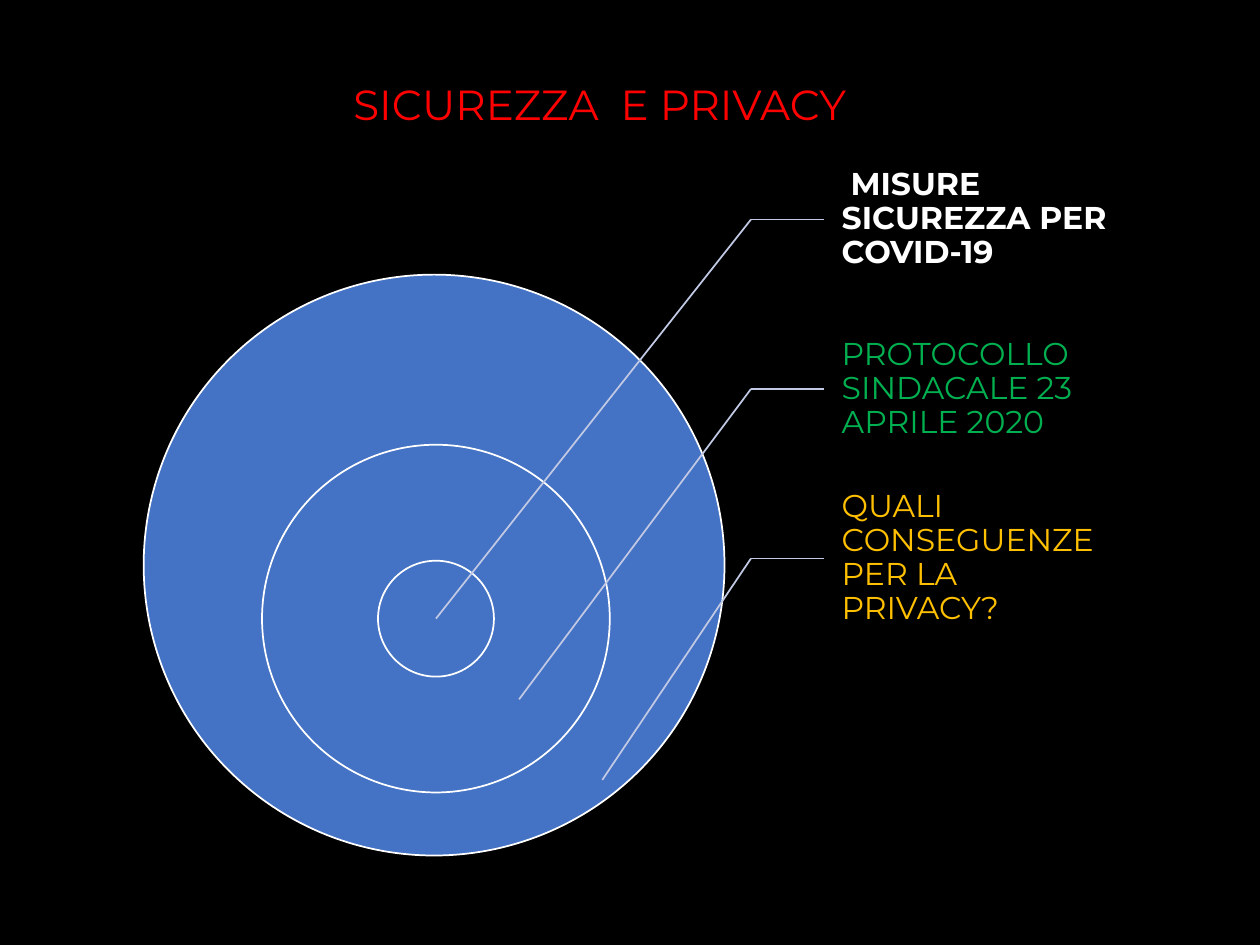
"""Build the slide on safety and privacy: three nested circles with labelled leaders."""
from dataclasses import dataclass

from pptx import Presentation
from pptx import util as u
from pptx.dml.color import RGBColor
from pptx.enum import shapes, text
from pptx.oxml.ns import qn
from lxml import etree


@dataclass(frozen=True)
class Theme:
    font: str = "Montserrat"
    title_size: int = 24
    label_size: int = 18
    line_width: int = 1
    background: str = "000000"
    title: str = "FF0000"
    circle: str = "4472C4"
    outline: str = "FFFFFF"
    leader: str = "C1C9E4"
    measures: str = "FFFFFF"
    protocol: str = "00B050"
    privacy: str = "FFC000"


THEME = Theme()
LABEL_LEFT, LABEL_TOP, LABEL_WIDTH, LABEL_HEIGHT = 6.54, 1.07, 2.3, 1.345
ELBOW_X = 5.96


def rgb(value):
    return RGBColor.from_string(value)


def add_words(slide, box, words, size, color, anchor, insets, align, bold=False):
    area = slide.shapes.add_textbox(*map(u.Inches, box))
    frame = area.text_frame
    frame.text = words
    frame.word_wrap = True
    frame.vertical_anchor = anchor
    frame.margin_left, frame.margin_top, frame.margin_right, frame.margin_bottom = map(
        u.Inches, insets)
    paragraph = frame.paragraphs[0]
    paragraph.alignment = align
    paragraph.line_spacing = 0.9
    font = paragraph.runs[0].font
    font.name, font.size, font.bold = THEME.font, u.Pt(size), bold
    font.color.rgb = rgb(color)


def add_circle(slide, left, top, diameter):
    circle = slide.shapes.add_shape(
        shapes.MSO_SHAPE.OVAL, *map(u.Inches, (left, top, diameter, diameter)))
    circle.shadow.inherit = False
    circle.fill.solid()
    circle.fill.fore_color.rgb = rgb(THEME.circle)
    circle.line.color.rgb = rgb(THEME.outline)
    circle.line.width = u.Pt(THEME.line_width)


def add_leader(slide, start, end):
    leader = slide.shapes.add_connector(
        shapes.MSO_CONNECTOR.STRAIGHT, *map(u.Inches, (*start, *end)))
    leader.line.color.rgb = rgb(THEME.leader)
    leader.line.width = u.Pt(THEME.line_width)
    etree.SubElement(leader._element.spPr, qn("a:effectLst"))


def add_callout(slide, row, words, color, target, bold):
    top = LABEL_TOP + row * LABEL_HEIGHT
    elbow = (ELBOW_X, top + LABEL_HEIGHT / 2)
    add_words(slide, (LABEL_LEFT, top, LABEL_WIDTH, LABEL_HEIGHT), words,
              THEME.label_size, color, text.MSO_ANCHOR.MIDDLE,
              (0.14, 0.03, 0.03, 0.03), text.PP_ALIGN.LEFT, bold)
    add_leader(slide, elbow, (LABEL_LEFT, elbow[1]))
    add_leader(slide, elbow, target)


def main():
    deck = Presentation()
    deck.slide_width, deck.slide_height = u.Inches(10), u.Inches(7.5)
    slide = deck.slides.add_slide(deck.slide_layouts[6])
    slide.background.fill.solid()
    slide.background.fill.fore_color.rgb = rgb(THEME.background)

    add_words(slide, (0.51, 0.21, 8.5, 0.87), "SICUREZZA  E PRIVACY",
              THEME.title_size, THEME.title, text.MSO_ANCHOR.BOTTOM,
              (0.1, 0.05, 0.1, 0.05), text.PP_ALIGN.CENTER)

    for circle in ((1.14, 2.18, 4.61), (2.08, 3.53, 2.76), (3, 4.45, 0.92)):
        add_circle(slide, *circle)

    callouts = (
        (" MISURE SICUREZZA PER COVID-19", THEME.measures, (3.46, 4.91), True),
        ("PROTOCOLLO SINDACALE 23 APRILE 2020", THEME.protocol, (4.12, 5.55), False),
        ("QUALI CONSEGUENZE PER LA PRIVACY?", THEME.privacy, (4.78, 6.19), False),
    )
    for row, callout in enumerate(callouts):
        add_callout(slide, row, *callout)

    deck.save("out.pptx")


if __name__ == "__main__":
    main()
